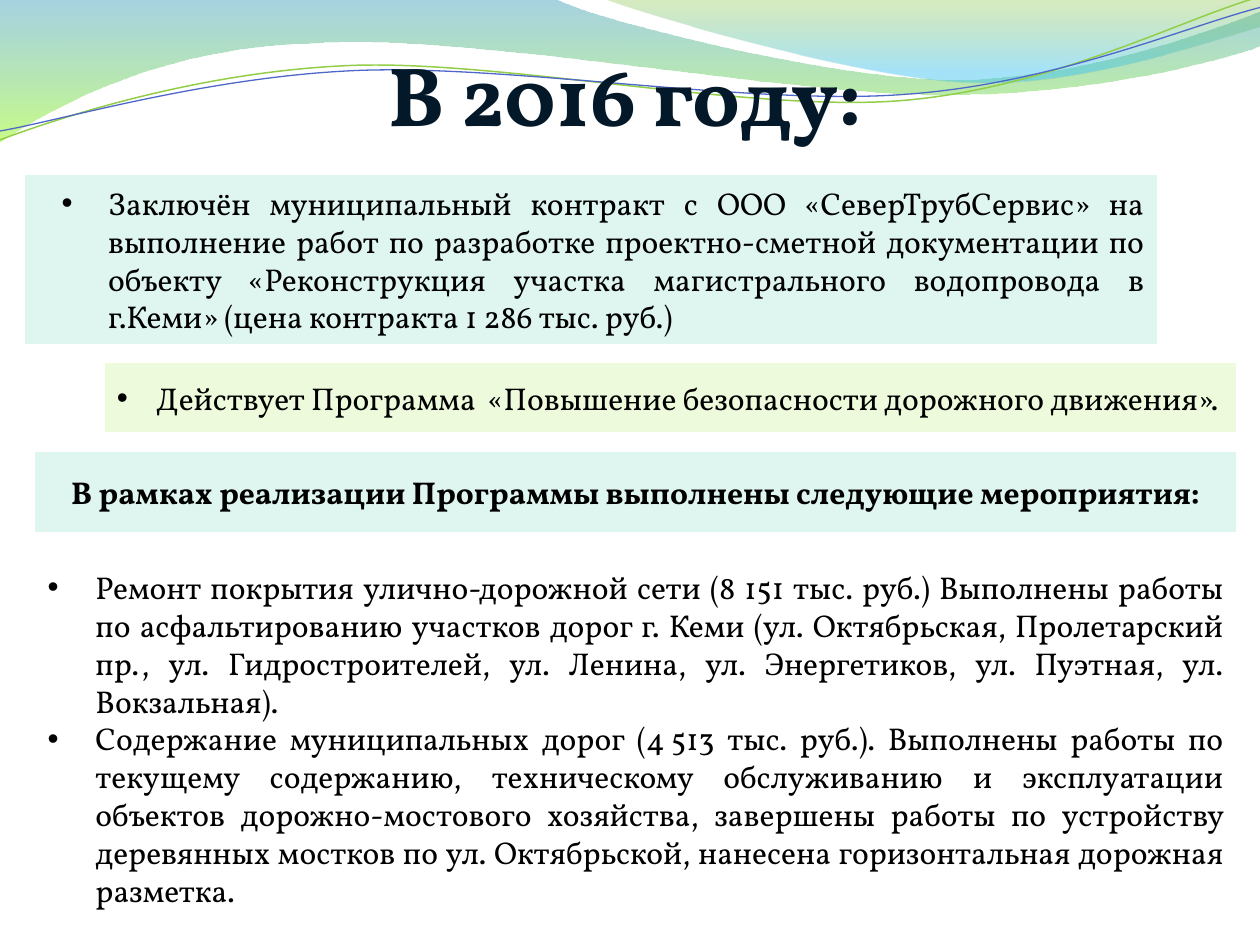
"""Build a slide on the municipal works carried out in 2016."""
import math

import pptx
import pptx.dml.color
import pptx.enum.shapes
import pptx.enum.text
import pptx.oxml
import pptx.oxml.ns
import pptx.util

Inches = pptx.util.Inches
Align = pptx.enum.text.PP_ALIGN
FONT = "Vollkorn"
HARD_SPACE = chr(160)
COLORS = {
    "title": "031828", "text": "000000", "mint": "DFF5EF", "lime": "EDFBDC",
    "wave_blue": "3B9CBF", "wave_lime": "9CFA24", "wave_green": "7EBE2C",
    "wave_cyan": "39C1F1", "green_line": "93CE48", "blue_line": "4E67C8",
}
LEFT_WAVE = [
    (0, 0), (4.4, -0.01),
    (4.76, 0.17, 6.64, 0.63, 7.58, 0.63), (8.53, 0.63, 9.58, 0.26, 10, 0.09),
    (10.01, 0.36),
    (9.83, 0.44, 8.7, 0.76, 7.46, 0.75), (6.22, 0.75, 3.82, 0.28, 2.57, 0.34),
    (1.29, 0.36, 0.46, 0.83, -0.01, 1.13),
]
RIGHT_WAVE = [
    (4.79, -0.01),
    (5.09, 0.11, 6.82, 0.62, 7.69, 0.65), (8.56, 0.69, 9.61, 0.32, 10, 0.21),
    (10, 0),
]
GREEN_CURVE = [
    (0, 1.11),
    (0.48, 0.93, 1.58, 0.57, 2.77, 0.52), (3.95, 0.47, 5.93, 0.89, 7.13, 0.8),
    (8.33, 0.71, 9.38, 0.15, 9.98, -0.02),
]
BLUE_CURVE = [
    (0, 1.04),
    (0.47, 0.96, 1.64, 0.61, 2.83, 0.56), (4.03, 0.51, 5.97, 0.84, 7.17, 0.75),
    (8.36, 0.67, 9.41, 0.21, 10, 0.06),
]
CURVE_TILT = 2.7
CONTRACT = (
    "Заключён муниципальный контракт с ООО «СеверТрубСервис» на выполнение работ "
    "по разработке проектно-сметной документации по объекту «Реконструкция участка "
    "магистрального водопровода в г.Кеми» (цена контракта "
    f"1{HARD_SPACE}286{HARD_SPACE}тыс. руб.)"
)
WORKS = [
    "Ремонт покрытия улично-дорожной сети (8 151 тыс. руб.) Выполнены работы по "
    "асфальтированию участков дорог г. Кеми (ул. Октябрьская, Пролетарский пр., "
    "ул. Гидростроителей, ул. Ленина, ул. Энергетиков, ул. Пуэтная, ул. Вокзальная).",
    f"Содержание муниципальных дорог (4{HARD_SPACE}513 тыс. руб.). Выполнены работы по "
    "текущему содержанию, техническому обслуживанию и эксплуатации объектов "
    "дорожно-мостового хозяйства, завершены работы по устройству деревянных мостков "
    "по ул. Октябрьской, нанесена горизонтальная дорожная разметка.",
]


def color(name):
    """Return the named colour."""
    return pptx.dml.color.RGBColor.from_string(COLORS[name])


def make_element(markup):
    """Return an empty drawing element."""
    return pptx.oxml.parse_xml(f'<a:{markup} {pptx.oxml.ns.nsdecls("a")}/>')


def turn(point, center, degrees):
    """Turn a point clockwise about a centre."""
    angle = math.radians(degrees)
    x, y = point[0] - center[0], point[1] - center[1]
    return (center[0] + x * math.cos(angle) - y * math.sin(angle),
            center[1] + x * math.sin(angle) + y * math.cos(angle))


def add_outline(page, segments, close, tilt=0, center=(0, 0)):
    """Draw a freeform of straight and cubic segments, tilted upwards."""
    points = [turn(segment[i:i + 2], center, tilt)
              for segment in segments for i in range(0, len(segment), 2)]
    points = [(Inches(x), Inches(y)) for x, y in points]
    builder = page.shapes.build_freeform(*points[0])
    builder.add_line_segments(points[1:], close=close)
    shape = builder.convert_to_shape()
    shape.shadow.inherit = False
    shape.rotation = -tilt
    lines = iter(list(shape._element.iter(pptx.oxml.ns.qn("a:lnTo"))))
    for segment in segments[1:]:
        parts = [next(lines) for _ in range(len(segment) // 2)]
        if len(parts) == 3:
            cubic = make_element("cubicBezTo")
            parts[0].addprevious(cubic)
            for part in parts:
                cubic.append(part[0])
                part.getparent().remove(part)
    return shape


def add_wave(page, segments, stops):
    """Add a wave with a translucent gradient from top to bottom."""
    wave = add_outline(page, segments, close=True)
    wave.line.fill.background()
    wave.fill.gradient()
    wave.fill.gradient_angle = 270
    for stop, (position, name, opacity) in zip(wave.fill.gradient_stops, stops):
        stop.position = position
        stop.color.rgb = color(name)
    tones = wave._element.spPr.iter(pptx.oxml.ns.qn("a:srgbClr"))
    for tone, (position, name, opacity) in zip(tones, stops):
        tone.append(make_element(f'alpha val="{opacity * 1000}"'))


def add_curve(page, segments, name, width, center):
    """Add an open, unfilled curve."""
    curve = add_outline(page, segments, close=False, tilt=CURVE_TILT, center=center)
    curve.fill.background()
    curve.line.color.rgb = color(name)
    curve.line.width = pptx.util.Pt(width)


def set_bullet(para, indent, hang):
    """Give a paragraph a round bullet and a hanging indent."""
    properties = para._p.get_or_add_pPr()
    properties.set("marL", str(Inches(indent)))
    properties.set("indent", str(-Inches(hang)))
    for markup in ('buFont typeface="Arial"', 'buChar char="•"'):
        properties.append(make_element(markup))


def write_text(frame, texts, size=18, bold=False, ink="text", align=Align.LEFT, bullet=None):
    """Write one formatted paragraph for each text."""
    frame.word_wrap = True
    for index, text in enumerate(texts):
        para = frame.paragraphs[0] if index == 0 else frame.add_paragraph()
        para.alignment = align
        if bullet:
            set_bullet(para, *bullet)
        span = para.add_run()
        span.text = text
        span.font.name = FONT
        span.font.size = pptx.util.Pt(size)
        span.font.bold = bold
        span.font.color.rgb = color(ink)


def add_text(page, place, texts, **style):
    """Add a text box that grows with its text."""
    box = page.shapes.add_textbox(*map(Inches, place))
    write_text(box.text_frame, texts, **style)
    box.text_frame.auto_size = pptx.enum.text.MSO_AUTO_SIZE.SHAPE_TO_FIT_TEXT


def add_panel(page, place, fill, text, **style):
    """Add a filled panel with vertically centred text."""
    panel = page.shapes.add_shape(
        pptx.enum.shapes.MSO_SHAPE.FLOWCHART_PROCESS, *map(Inches, place))
    panel.shadow.inherit = False
    panel.fill.solid()
    panel.fill.fore_color.rgb = color(fill)
    panel.line.fill.background()
    panel.text_frame.vertical_anchor = pptx.enum.text.MSO_ANCHOR.MIDDLE
    write_text(panel.text_frame, [text], **style)


def main():
    """Build and save the slide."""
    deck = pptx.Presentation()
    deck.slide_width, deck.slide_height = Inches(10), Inches(7.5)
    page = deck.slides.add_slide(deck.slide_layouts[6])
    add_wave(page, LEFT_WAVE, [(0, "wave_blue", 45), (1, "wave_lime", 55)])
    add_wave(page, RIGHT_WAVE, [(0, "wave_green", 30), (0.8, "wave_cyan", 45)])
    add_curve(page, GREEN_CURVE, "green_line", 0.85, center=(4.99, 0.58))
    add_curve(page, BLUE_CURVE, "blue_line", 0.75, center=(5, 0.59))
    add_text(page, (1.03, 0.29, 7.87, 1.21), ["В 2016 году:"],
             size=48, bold=True, ink="title", align=Align.CENTER)
    add_panel(page, (0.2, 1.39, 8.98, 1.34), "mint", CONTRACT,
              align=Align.JUSTIFY, bullet=(0.56, 0.37))
    add_panel(page, (0.83, 2.88, 8.98, 0.55), "lime",
              "Действует Программа  «Повышение безопасности дорожного движения».",
              bullet=(0.31, 0.31))
    add_panel(page, (0.28, 3.59, 9.53, 0.63), "mint",
              "В рамках реализации Программы выполнены следующие мероприятия:",
              bold=True, align=Align.CENTER)
    add_text(page, (0.28, 4.46, 9.53, 2.52), WORKS,
             align=Align.JUSTIFY, bullet=(0.38, 0.38))
    deck.save("out.pptx")


if __name__ == "__main__":
    main()
